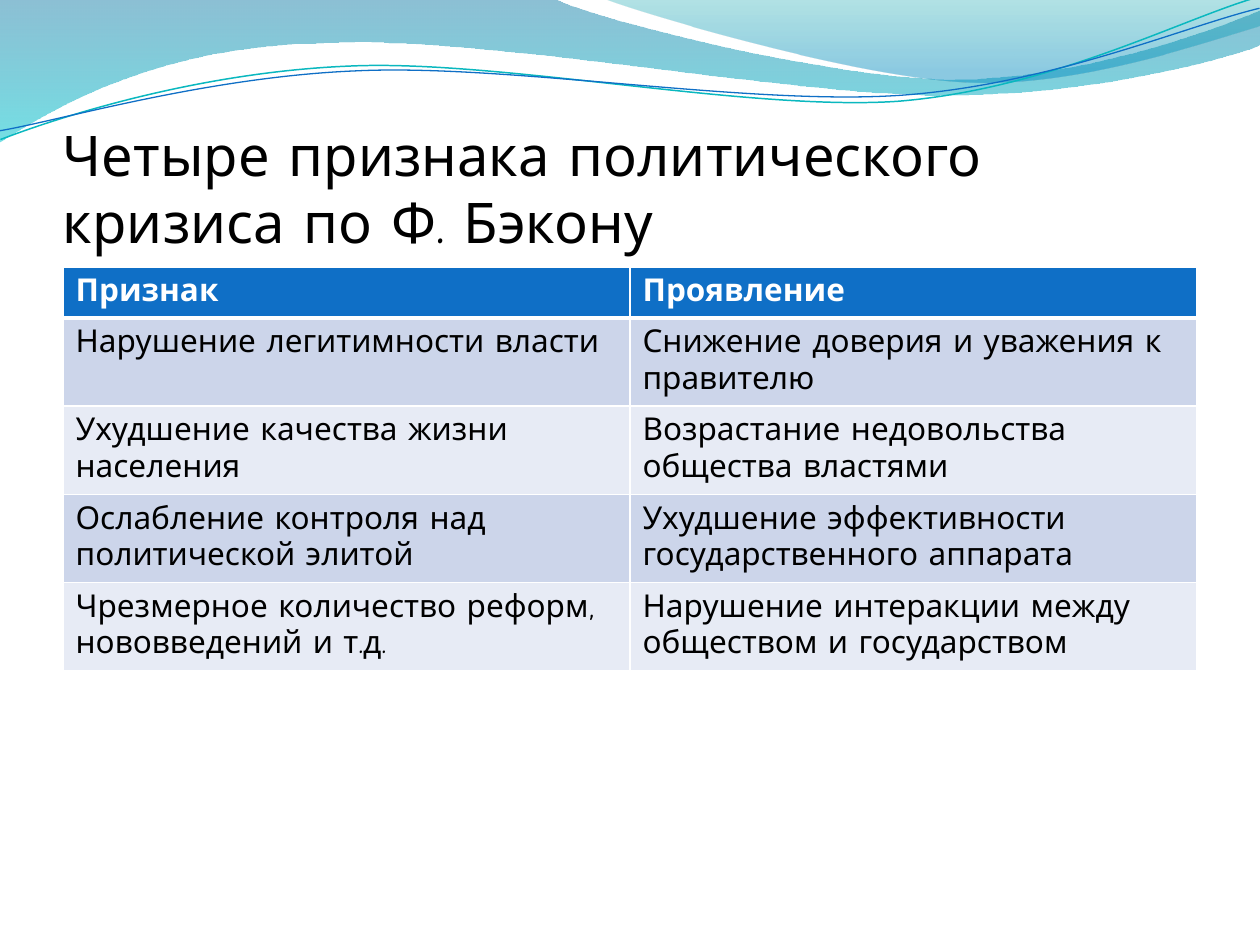
from dataclasses import dataclass

from lxml import etree
from pptx import Presentation
from pptx.dml.color import RGBColor
from pptx.enum.text import MSO_ANCHOR
from pptx.oxml.ns import qn
from pptx.util import Pt

PX = 914400 // 126
FONT = "Comic Neue"
BOTTOM = MSO_ANCHOR.BOTTOM
COLORS = {
    "black": "000000", "white": "FFFFFF",
    "blue": "0F6FC6", "turquoise": "0AB8BF",
    "band_dark": "CCD5EA", "band_light": "E7EBF5",
    "wave_blue": "0074A1", "wave_cyan": "00C6CF",
    "crest_teal": "00A1A9", "crest_blue": "008BBF",
}


@dataclass(frozen=True)
class Stop:
    position: float
    color: str
    opacity: int


@dataclass(frozen=True)
class Wave:
    """A path in px: steps of 2 numbers are lines, steps of 6 are Bezier curves."""
    start: tuple[int, int]
    steps: tuple[tuple[int, ...], ...]
    stops: tuple[Stop, ...] = ()
    line_color: str = ""
    line_width: float = 0
    rotation: float = 0


WAVES = (
    Wave((0, 0), (
        (554, -1), (600, 21, 837, 79, 955, 79), (1075, 79, 1207, 33, 1260, 11),
        (1261, 45), (1239, 55, 1096, 96, 940, 95), (784, 95, 481, 35, 324, 43),
        (163, 45, 58, 105, -1, 142), (0, 0)),
        stops=(Stop(0, "wave_blue", 45), Stop(1, "wave_cyan", 55))),
    Wave((604, -1), (
        (641, 14, 859, 78, 969, 82), (1079, 87, 1211, 40, 1260, 26), (1260, 0),
        (604, -1)),
        stops=(Stop(0, "crest_teal", 30), Stop(0.8, "crest_blue", 45))),
    Wave((-2, 110), (
        (58, 90, 199, 52, 350, 53), (499, 53, 745, 117, 896, 114),
        (1049, 109, 1184, 45, 1260, 27)),
        line_color="turquoise", line_width=0.85, rotation=357.3),
    Wave((-2, 101), (
        (57, 94, 207, 57, 357, 58), (509, 58, 750, 112, 902, 108),
        (1052, 104, 1188, 52, 1262, 38)),
        line_color="blue", line_width=0.75, rotation=357.3),
)

ROWS = (
    ("Признак", "Проявление"),
    ("Нарушение легитимности власти", "Снижение доверия и уважения к правителю"),
    ("Ухудшение качества жизни населения", "Возрастание недовольства общества властями"),
    ("Ослабление контроля над политической элитой",
     "Ухудшение эффективности государственного аппарата"),
    ("Чрезмерное количество реформ, нововведений и т.д.",
     "Нарушение интеракции между обществом и государством"),
)


def rgb(name: str) -> RGBColor:
    return RGBColor.from_string(COLORS[name])


def write_text(text_frame, text: str, *, size: int, color: str = "black",
               bold: bool = False) -> None:
    text_frame.word_wrap = True
    run = text_frame.paragraphs[0].add_run()
    run.text = text
    run.font.name = FONT
    run.font.size = Pt(size)
    run.font.bold = bold
    run.font.color.rgb = rgb(color)


def bend_segments(shape, wave: Wave) -> None:
    """Join each three segments that belong to a curve into one Bezier."""
    segments = iter(list(shape._element.iter(qn("a:lnTo"))))
    for step in wave.steps:
        group = [next(segments) for _ in range(len(step) // 2)]
        if len(group) == 3:
            curve = etree.Element(qn("a:cubicBezTo"))
            group[0].addprevious(curve)
            for segment in group:
                curve.append(segment[0])
                segment.getparent().remove(segment)


def draw_wave(slide, wave: Wave) -> None:
    builder = slide.shapes.build_freeform(*wave.start, scale=PX)
    points = [step[i:i + 2] for step in wave.steps for i in range(0, len(step), 2)]
    builder.add_line_segments(points, close=bool(wave.stops))
    shape = builder.convert_to_shape()
    bend_segments(shape, wave)
    shape.rotation = wave.rotation
    shape.shadow.inherit = False
    if not wave.stops:
        shape.fill.background()
        shape.line.color.rgb = rgb(wave.line_color)
        shape.line.width = Pt(wave.line_width)
        return
    shape.line.fill.background()
    shape.fill.gradient()
    shape.fill.gradient_angle = 270
    for target, stop in zip(shape.fill.gradient_stops, wave.stops):
        target.position = stop.position
        target.color.rgb = rgb(stop.color)
    # Opacity of each gradient stop
    for color, stop in zip(shape._element.spPr.iter(qn("a:srgbClr")), wave.stops):
        etree.SubElement(color, qn("a:alpha"), val=str(stop.opacity * 1000))


def set_borders(cell, *, top: int = 1, bottom: int = 1) -> None:
    properties = cell._tc.get_or_add_tcPr()
    for side, width in (("L", 1), ("R", 1), ("T", top), ("B", bottom)):
        line = etree.SubElement(properties, qn(f"a:ln{side}"), w=str(Pt(width)))
        fill = etree.SubElement(line, qn("a:solidFill"))
        etree.SubElement(fill, qn("a:srgbClr"), val=COLORS["white"])


def draw_table(slide, left: int, top: int, column_width: int,
               row_height: int, height: int) -> None:
    """Rows start one line high and grow with their text."""
    columns = len(ROWS[0])
    frame = slide.shapes.add_table(len(ROWS), columns, left * PX, top * PX,
                                   column_width * columns * PX, height * PX)
    table = frame.table
    table.horz_banding = False
    for index, texts in enumerate(ROWS):
        header = index == 0
        table.rows[index].height = row_height * PX
        band = "blue" if header else "band_dark" if index % 2 else "band_light"
        for cell, text in zip(table.rows[index].cells, texts):
            set_borders(cell, top=3 if index == 1 else 1, bottom=3 if header else 1)
            cell.fill.solid()
            cell.fill.fore_color.rgb = rgb(band)
            write_text(cell.text_frame, text, size=18, bold=header,
                       color="white" if header else "black")
    frame.height = height * PX


def draw_title(slide, text: str) -> None:
    box = slide.shapes.add_textbox(63 * PX, 97 * PX, 1134 * PX, 158 * PX)
    frame = box.text_frame
    frame.margin_left = frame.margin_right = frame.margin_bottom = 0
    frame.margin_top = 6 * PX
    frame.vertical_anchor = BOTTOM
    write_text(frame, text, size=32)


def main() -> None:
    presentation = Presentation()
    presentation.slide_width = 1260 * PX
    presentation.slide_height = 945 * PX
    slide = presentation.slides.add_slide(presentation.slide_layouts[6])

    # Waves along the top edge
    for wave in WAVES:
        draw_wave(slide, wave)

    # Title and table
    draw_title(slide, "Четыре признака политического кризиса по Ф. Бэкону")
    draw_table(slide, left=63, top=267, column_width=567, row_height=51, height=404)

    presentation.save("out.pptx")


if __name__ == "__main__":
    main()
